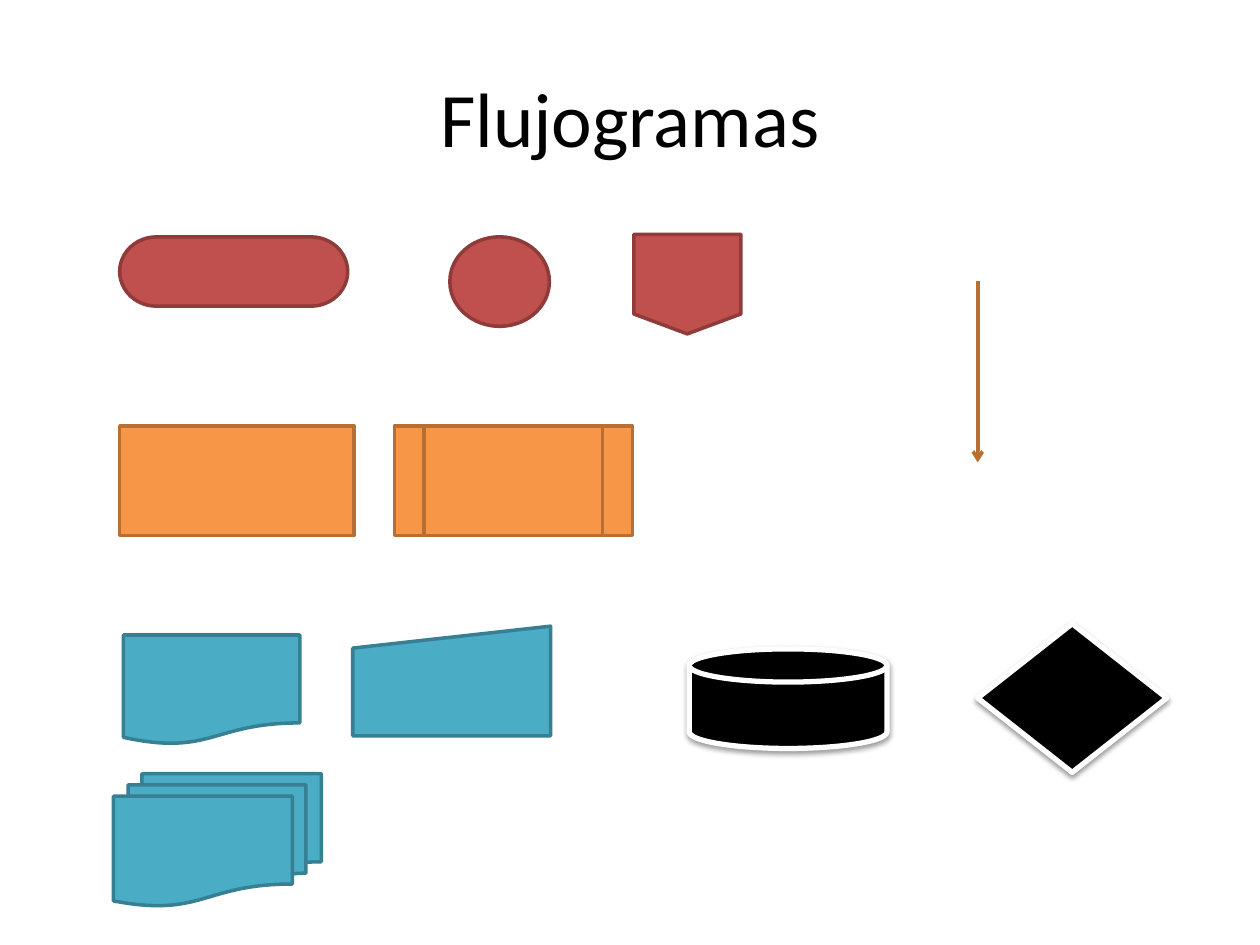
from lxml.etree import SubElement
from pptx import Presentation
from pptx.dml.color import RGBColor
from pptx.enum.shapes import MSO_CONNECTOR as Connector, MSO_SHAPE as Shape
from pptx.enum.text import MSO_ANCHOR as Anchor, PP_ALIGN as Align
from pptx.oxml.ns import qn
from pptx.util import Inches, Pt

COLORS = {
    "black": "000000", "white": "FFFFFF",
    "red": "C0504D", "red_edge": "8E3B39",
    "orange": "F79646", "orange_edge": "B76F34",
    "aqua": "4BACC6", "aqua_edge": "377F92",
}
FONT = "Calibri"
COLUMNS, ROWS = 100, 75
CELL = Inches(10) / COLUMNS


def cells(*counts):
    """Turn counts of grid cells into lengths."""
    return [round(count * CELL) for count in counts]


def color(name):
    """Look up a named colour."""
    return RGBColor.from_string(COLORS[name])


def add_title(slide, box, text):
    """Write the centred slide title in its box."""
    frame = slide.shapes.add_textbox(*cells(*box)).text_frame
    frame.word_wrap = True
    frame.vertical_anchor = Anchor.MIDDLE
    paragraph = frame.paragraphs[0]
    paragraph.alignment = Align.CENTER
    run = paragraph.add_run()
    run.text = text
    run.font.name, run.font.size = FONT, Pt(44)
    run.font.color.rgb = color("black")


def add_soft_shadow(shape):
    """Give a shape a faint shadow straight below it."""
    effects = shape._element.spPr.find(qn("a:effectLst"))
    shadow = SubElement(effects, qn("a:outerShdw"), blurRad=str(Pt(3.1)),
                        dist=str(Pt(1.6)), dir="5400000", rotWithShape="0")
    tint = SubElement(shadow, qn("a:srgbClr"), val=COLORS["black"])
    SubElement(tint, qn("a:alpha"), val="38000")


def add_symbols(slide, origin, symbols, fill, edge, width=2, shadow=False):
    """Draw a family of flowchart symbols, placed from the region's corner."""
    for kind, left, top, wide, high in symbols:
        box = cells(origin[0] + left, origin[1] + top, wide, high)
        shape = slide.shapes.add_shape(kind, *box)
        shape.shadow.inherit = False
        shape.fill.solid()
        shape.fill.fore_color.rgb = color(fill)
        shape.line.color.rgb = color(edge)
        shape.line.width = Pt(width)
        if shadow:
            add_soft_shadow(shape)


def add_terminals(slide, origin):
    """Draw the start, end and connector symbols."""
    add_symbols(slide, origin, [
        (Shape.FLOWCHART_TERMINATOR, 0, 0.2, 18.1, 5.5),
        (Shape.FLOWCHART_CONNECTOR, 26.2, 0.2, 7.9, 7.1),
        (Shape.FLOWCHART_OFFPAGE_CONNECTOR, 40.8, 0, 8.5, 7.9),
    ], "red", "red_edge")


def add_processes(slide, origin):
    """Draw the process symbols."""
    add_symbols(slide, origin, [
        (Shape.FLOWCHART_PREDEFINED_PROCESS, 21.8, 0, 18.9, 8.7),
        (Shape.FLOWCHART_PROCESS, 0, 0, 18.6, 8.7),
    ], "orange", "orange_edge")


def add_inputs_outputs(slide, origin):
    """Draw the document and manual input symbols."""
    add_symbols(slide, origin, [
        (Shape.FLOWCHART_DOCUMENT, 0.8, 0.7, 14, 8.7),
        (Shape.FLOWCHART_MANUAL_INPUT, 19, 0, 15.7, 8.7),
        (Shape.FLOWCHART_MULTIDOCUMENT, 0, 11.7, 16.5, 10.5),
    ], "aqua", "aqua_edge")


def add_storage_and_decision(slide, origin):
    """Draw the magnetic disk and the decision symbol."""
    add_symbols(slide, origin, [
        (Shape.FLOWCHART_DECISION, 22.9, 0, 15, 11.8),
        (Shape.FLOWCHART_MAGNETIC_DISK, 0, 2, 15.7, 7.9),
    ], "black", "white", 3, True)


def add_flow_arrow(slide, origin, length):
    """Draw the downward flow arrow."""
    left, top = origin
    arrow = slide.shapes.add_connector(
        Connector.STRAIGHT, *cells(left, top, left, top + length))
    arrow.line.color.rgb = color("orange_edge")
    arrow.line.width = Pt(2)
    SubElement(arrow.line._get_or_add_ln(), qn("a:tailEnd"), type="arrow")
    SubElement(arrow._element.spPr, qn("a:effectLst"))


def main():
    """Build the flowchart symbols slide."""
    presentation = Presentation()
    presentation.slide_width, presentation.slide_height = cells(COLUMNS, ROWS)
    slide = presentation.slides.add_slide(presentation.slide_layouts[6])
    add_title(slide, (5, 3, 90, 12.5), "Flujogramas")
    add_terminals(slide, (9.5, 18.6))
    add_processes(slide, (9.5, 33.8))
    add_inputs_outputs(slide, (9, 49.7))
    add_storage_and_decision(slide, (54.7, 49.5))
    add_flow_arrow(slide, (77.6, 22.3), 14.4)
    presentation.save("out.pptx")


if __name__ == "__main__":
    main()
